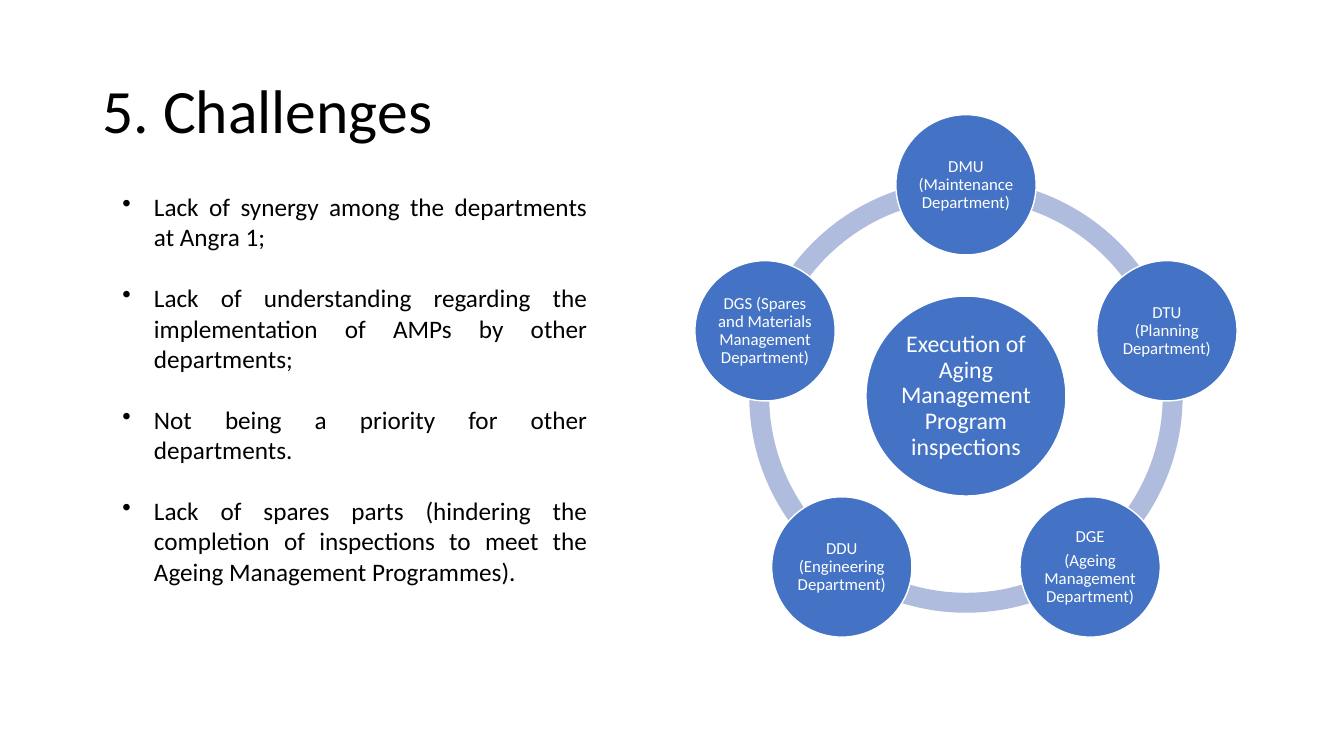
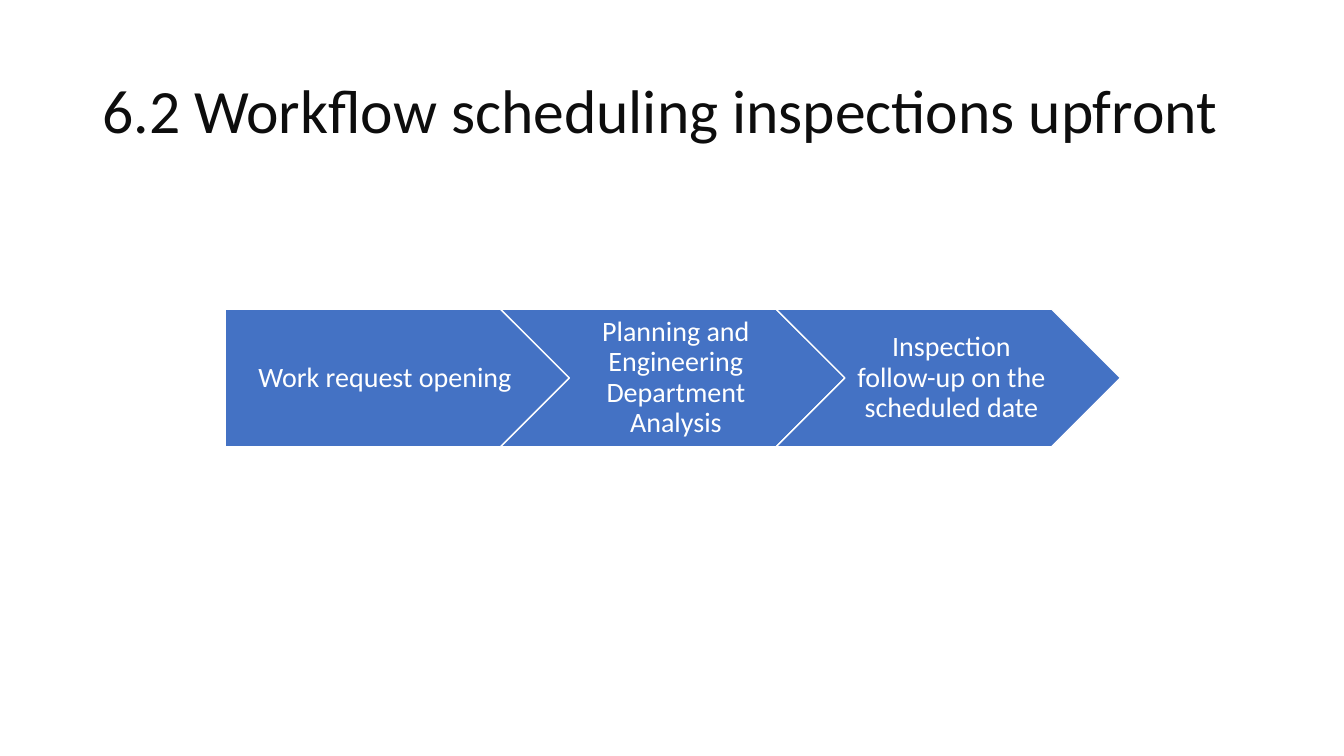
import math
from dataclasses import dataclass

import pptx
import pptx.dml.color
import pptx.enum.shapes
import pptx.enum.text
import pptx.oxml
import pptx.oxml.ns
import pptx.util

ALIGN = pptx.enum.text.PP_ALIGN
ANCHOR = pptx.enum.text.MSO_ANCHOR
SHAPE = pptx.enum.shapes.MSO_SHAPE
TITLE_ONLY = 5


@dataclass(frozen=True)
class Theme:
    font: str = "Calibri"
    ink: str = "000000"
    soft_ink: str = "0D0D0D"
    accent: str = "4472C4"
    ring: str = "B0BCDE"
    paper: str = "FFFFFF"
    title_size: float = 44
    body_size: float = 18
    hub_size: float = 17
    node_size: float = 12
    step_size: float = 20
    tight: float = 0.9
    outline: float = 1


THEME = Theme()


def cells(count):
    """Length of grid cells; the slide is 160 columns by 90 rows of square cells."""
    return pptx.util.Inches(count / 12)


def rgb(color):
    return pptx.dml.color.RGBColor.from_string(color)


def add_bullet(paragraph, indent):
    properties = paragraph._p.get_or_add_pPr()
    properties.set("marL", str(indent))
    properties.set("indent", str(-indent))
    bullet = pptx.oxml.parse_xml(
        f'<a:buChar {pptx.oxml.ns.nsdecls("a")} char="•"/>')
    properties.append(bullet)


def write_text(frame, paragraphs, *, size, color, align=ALIGN.CENTER,
               anchor=ANCHOR.MIDDLE, margins=None, line_spacing=None,
               gap=0, bullet_indent=None):
    """Fill a text frame; gap is the space in points between paragraphs,
    margins are left, top, right and bottom in points."""
    frame.word_wrap = True
    frame.auto_size = pptx.enum.text.MSO_AUTO_SIZE.NONE
    frame.vertical_anchor = anchor
    if margins:
        (frame.margin_left, frame.margin_top,
         frame.margin_right, frame.margin_bottom) = map(pptx.util.Pt, margins)
    for index, text in enumerate(paragraphs):
        paragraph = frame.paragraphs[0] if index == 0 else frame.add_paragraph()
        if bullet_indent:
            add_bullet(paragraph, bullet_indent)
        paragraph.alignment = align
        paragraph.line_spacing = line_spacing
        paragraph.space_before = pptx.util.Pt(gap if index else 0)
        run = paragraph.add_run()
        run.text = text
        run.font.name = THEME.font
        run.font.size = pptx.util.Pt(size)
        run.font.color.rgb = rgb(color)


class Deck:
    def __init__(self):
        self.presentation = pptx.Presentation()
        self.presentation.slide_width = cells(160)
        self.presentation.slide_height = cells(90)
        self.slide = None

    def add_slide(self, title, color=THEME.ink):
        layout = self.presentation.slide_layouts[TITLE_ONLY]
        self.slide = self.presentation.slides.add_slide(layout)
        shape = self.slide.shapes.title
        shape.left, shape.top = cells(11), cells(4.8)
        shape.width, shape.height = cells(138), cells(17.4)
        write_text(shape.text_frame, [title], size=THEME.title_size,
                   color=color, align=ALIGN.LEFT, line_spacing=THEME.tight)

    def add_shape(self, kind, left, top, width, height, fill, outline=None):
        shape = self.slide.shapes.add_shape(
            kind, cells(left), cells(top), cells(width), cells(height))
        shape.shadow.inherit = False
        shape.fill.solid()
        shape.fill.fore_color.rgb = rgb(fill)
        if outline:
            shape.line.color.rgb = rgb(outline)
            shape.line.width = pptx.util.Pt(THEME.outline)
        else:
            shape.line.fill.background()
        return shape

    def add_bullets(self, items, left, top, width, height):
        box = self.slide.shapes.add_textbox(
            cells(left), cells(top), cells(width), cells(height))
        write_text(box.text_frame, items, size=THEME.body_size,
                   color=THEME.ink, align=ALIGN.JUSTIFY, anchor=ANCHOR.TOP,
                   gap=22, bullet_indent=cells(3.75))

    def add_circle(self, paragraphs, center_x, center_y, diameter, size):
        shape = self.add_shape(
            SHAPE.OVAL, center_x - diameter / 2, center_y - diameter / 2,
            diameter, diameter, THEME.accent, THEME.paper)
        write_text(shape.text_frame, paragraphs, size=size, color=THEME.paper,
                   margins=(1.5,) * 4, line_spacing=THEME.tight, gap=4.2)

    def add_arc(self, center_x, center_y, diameter, start, end):
        """Draw a ring segment clockwise between two angles in degrees."""
        shape = self.add_shape(
            SHAPE.BLOCK_ARC, center_x - diameter / 2, center_y - diameter / 2,
            diameter, diameter, THEME.ring)
        degree = 60000 / 100000
        shape.adjustments[0] = start * degree
        shape.adjustments[1] = end * degree
        shape.adjustments[2] = 0.046

    def add_radial_cycle(self, hub, nodes, center_x, center_y):
        """Place nodes clockwise from the top, joined by a ring around a hub."""
        orbit = 25.15
        step = 360 / len(nodes)
        angles = [(270 + step * index) % 360 for index in range(len(nodes))]
        for angle in angles:
            self.add_arc(center_x, center_y, 51.6, angle, (angle + step) % 360)
        self.add_circle([hub], center_x, center_y, 23.8, THEME.hub_size)
        for angle, node in zip(angles, nodes):
            radians = math.radians(angle)
            self.add_circle(node, center_x + orbit * math.cos(radians),
                            center_y + orbit * math.sin(radians),
                            16.7, THEME.node_size)

    def add_process(self, steps, left, top, width, height):
        """Draw interlocking arrows, each starting at 80% of the one before."""
        for index, text in enumerate(steps):
            kind = SHAPE.CHEVRON if index else SHAPE.PENTAGON
            shape = self.add_shape(kind, left + 0.8 * width * index, top,
                                   width, height, THEME.accent, THEME.paper)
            write_text(shape.text_frame, [text], size=THEME.step_size,
                       color=THEME.paper, line_spacing=THEME.tight,
                       margins=(6.5 if index else 9, 4.5, 2, 4.5))


def main():
    deck = Deck()

    deck.add_slide("5. Challenges")
    deck.add_radial_cycle(
        "Execution of Aging Management Program inspections",
        [
            ["DMU (Maintenance Department)"],
            ["DTU (Planning Department)"],
            ["DGE", "(Ageing Management Department)"],
            ["DDU (Engineering Department)"],
            ["DGS (Spares and Materials Management Department)"],
        ],
        center_x=115, center_y=47.15)
    deck.add_bullets(
        [
            "Lack of synergy among the departments at Angra 1;",
            "Lack of understanding regarding the implementation of AMPs "
            "by other departments;",
            "Not being a priority for other departments.",
            "Lack of spares parts (hindering the completion of inspections "
            "to meet the Ageing Management Programmes).",
        ],
        left=13.4, top=22.2, width=57.7, height=63)

    deck.add_slide("6.2 Workflow scheduling inspections upfront",
                   color=THEME.soft_ink)
    deck.add_process(
        [
            "Work request opening",
            "Planning and Engineering Department Analysis",
            "Inspection follow-up on the scheduled date",
        ],
        left=26.8, top=36.8, width=41, height=16.4)

    deck.presentation.save("out.pptx")


if __name__ == "__main__":
    main()
